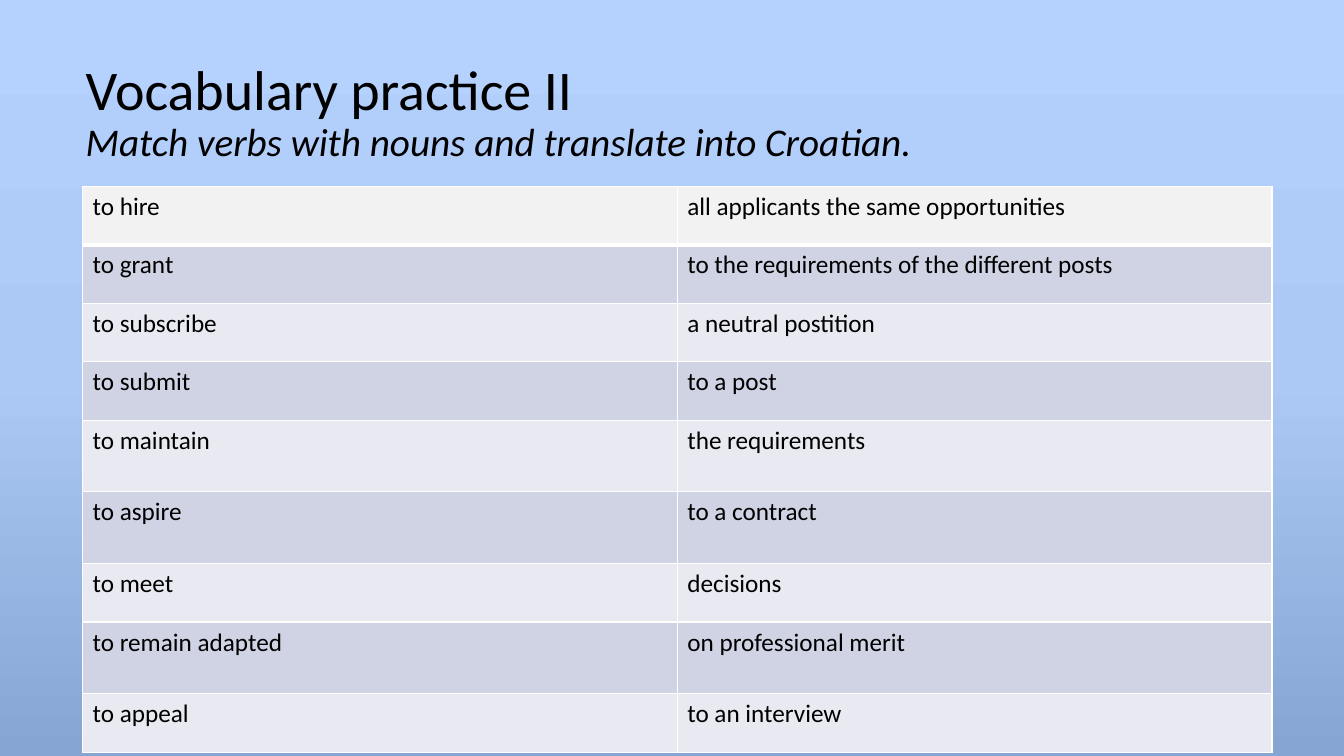
from copy import deepcopy

from lxml.etree import SubElement
from pptx import Presentation
from pptx.dml.color import RGBColor as Color
from pptx.enum.text import MSO_ANCHOR as Anchor, MSO_AUTO_SIZE as AutoSize, PP_ALIGN as Align
from pptx.oxml.ns import qn
from pptx.util import Pt

COLORS = {
    "sky_top": "B5D1FD",
    "sky_middle": "ACC9F5",
    "sky_bottom": "86A5D2",
    "text": "000000",
    "border": "FFFFFF",
    "header": "F2F2F2",
    "dark_band": "D0D3E3",
    "light_band": "E9EAF1",
}
PAIRS = [
    ("to hire", "all applicants the same opportunities"),
    ("to grant", "to the requirements of the different posts"),
    ("to subscribe", "a neutral postition"),
    ("to submit", "to a post"),
    ("to maintain", "the requirements"),
    ("to aspire", "to a contract"),
    ("to meet", "decisions"),
    ("to remain adapted", "on professional merit"),
    ("to appeal", "to an interview"),
]
TALL_ROWS = {4, 5, 7}


def color(name):
    return Color.from_string(COLORS[name])


def write(paragraph, text, size=18, font="Calibri", italic=None):
    run = paragraph.add_run()
    run.text = text
    run.font.size = Pt(size)
    run.font.name = font
    run.font.italic = italic
    run.font.color.rgb = color("text")
    return run


class SlideBuilder:
    def __init__(self, presentation):
        self.slide = presentation.slides.add_slide(presentation.slide_layouts[5])

    def background(self, names):
        fill = self.slide.background.fill
        fill.gradient()
        fill.gradient_angle = 270
        first = self.slide.element.find(".//" + qn("a:gs"))
        for _ in names[2:]:
            first.addnext(deepcopy(first))
        for index, (stop, name) in enumerate(zip(fill.gradient_stops, names)):
            stop.color.rgb = color(name)
            stop.position = index / (len(names) - 1)

    def title(self, heading, instruction, left, top, width, height):
        shape = self.slide.shapes.title
        shape.left, shape.top, shape.width, shape.height = map(Pt, (left, top, width, height))
        frame = shape.text_frame
        frame.word_wrap = True
        frame.auto_size = AutoSize.NONE
        frame.vertical_anchor = Anchor.MIDDLE
        paragraph = frame.paragraphs[0]
        paragraph.alignment = Align.LEFT
        paragraph.line_spacing = 0.9
        run = write(paragraph, heading, size=40)
        paragraph.add_line_break()
        line_break = paragraph._p.find(qn("a:br"))
        line_break.append(deepcopy(run.font._element))
        write(paragraph, instruction, size=28, italic=True)

    def borders(self, cell, **widths):
        properties = cell._tc.get_or_add_tcPr()
        for index, side in enumerate(("L", "R", "T", "B")):
            line = SubElement(properties, qn("a:ln" + side), w=str(Pt(widths.get(side, 1))))
            fill = SubElement(line, qn("a:solidFill"))
            SubElement(fill, qn("a:srgbClr"), val=COLORS["border"])
            properties.insert(index, line)

    def table(self, rows, left, top, width, row_height, tall_height, tall_rows):
        heights = [tall_height if index in tall_rows else row_height for index in range(len(rows))]
        columns = len(rows[0])
        table = self.slide.shapes.add_table(
            len(rows), columns, Pt(left), Pt(top), Pt(width), Pt(sum(heights))
        ).table
        for column in table.columns:
            column.width = Pt(width / columns)
        for row_index, texts in enumerate(rows):
            table.rows[row_index].height = Pt(heights[row_index])
            band = ("light_band", "dark_band")[row_index % 2] if row_index else "header"
            for column_index, text in enumerate(texts):
                cell = table.cell(row_index, column_index)
                cell.fill.solid()
                cell.fill.fore_color.rgb = color(band)
                self.borders(cell, T=3 if row_index == 1 else 1, B=1 if row_index else 3)
                write(cell.text_frame.paragraphs[0], text).font.bold = False


def main():
    presentation = Presentation()
    presentation.slide_width = Pt(960)
    presentation.slide_height = Pt(540)
    builder = SlideBuilder(presentation)
    builder.background(["sky_top", "sky_middle", "sky_bottom"])
    builder.title(
        "Vocabulary practice II ",
        "Match verbs with nouns and translate into Croatian.",
        left=54, top=28.8, width=872, height=104.4,
    )
    builder.table(
        PAIRS, left=59, top=133, width=849.6,
        row_height=41.8, tall_height=51.2, tall_rows=TALL_ROWS,
    )
    presentation.save("out.pptx")


if __name__ == "__main__":
    main()
